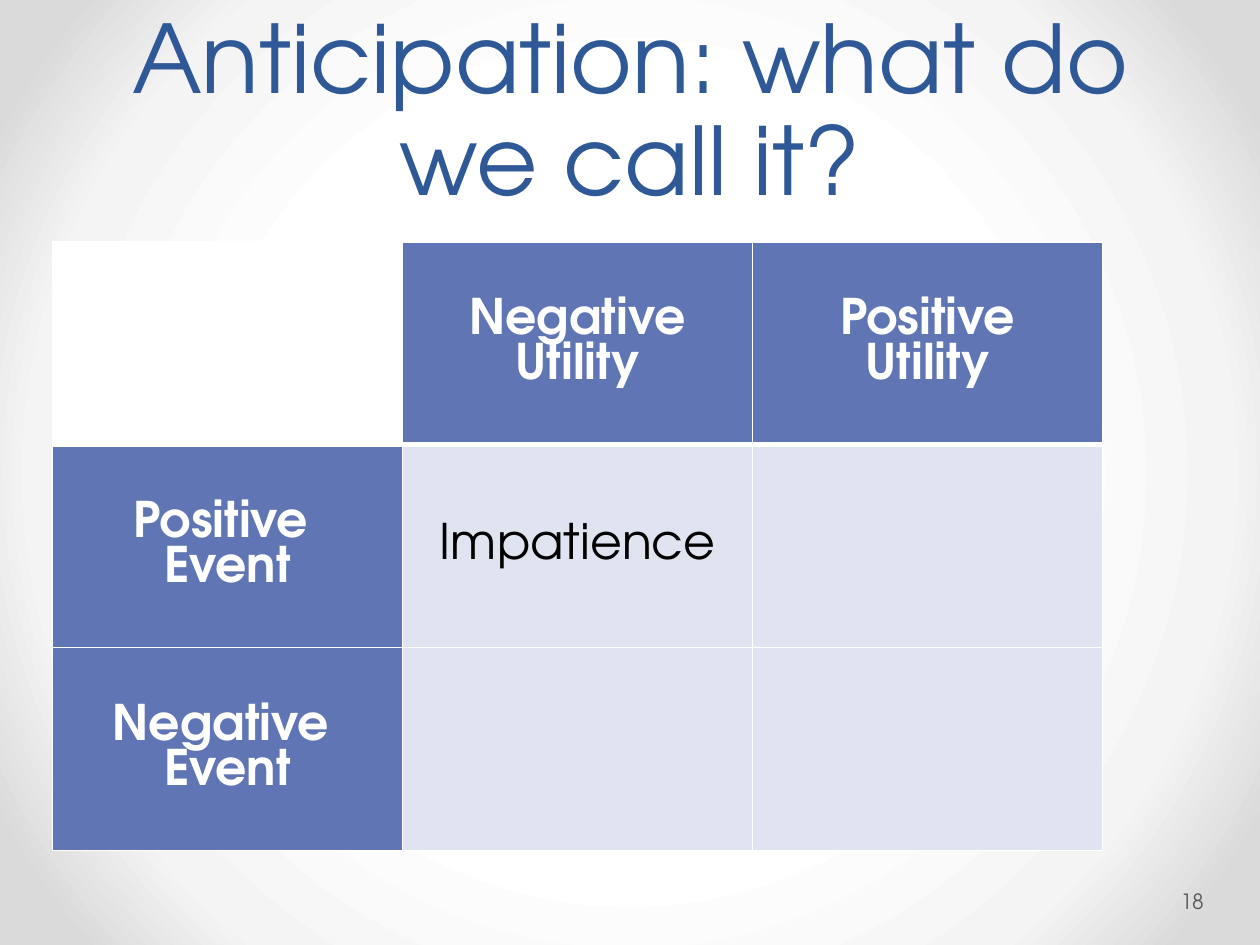
from dataclasses import dataclass

from lxml import etree
from pptx import Presentation
from pptx.dml.color import RGBColor
from pptx.enum.text import MSO_ANCHOR, PP_ALIGN
from pptx.oxml.ns import qn
from pptx.util import Inches, Pt

CENTER, LEFT = PP_ALIGN.CENTER, PP_ALIGN.LEFT
MIDDLE, BOTTOM = MSO_ANCHOR.MIDDLE, MSO_ANCHOR.BOTTOM


@dataclass(frozen=True)
class Theme:
    font: str = "TeX Gyre Adventor"
    title: str = "2F5897"
    number: str = "595959"
    header: str = "6076B4"
    body: str = "DFE4F0"
    white: str = "FFFFFF"
    black: str = "000000"
    title_size: int = 54
    title_spacing: int = 58
    cell_size: int = 28
    number_size: int = 12
    thin: int = 1
    thick: int = 3
    backdrop: tuple = ((50, "FFFFFF"), (76, "F4F4F4"), (92, "DADADA"))


THEME = Theme()


def write(frame, text, *, size, color, bold=False, align=LEFT, spacing=None):
    paragraph = frame.paragraphs[0]
    paragraph.text = text
    paragraph.alignment = align
    if spacing:
        paragraph.line_spacing = Pt(spacing)
    for run in paragraph.runs:
        run.font.name = THEME.font
        run.font.size = Pt(size)
        run.font.bold = bold
        run.font.color.rgb = RGBColor.from_string(color)


def add_solid(parent, color):
    fill = etree.SubElement(parent, qn("a:solidFill"))
    etree.SubElement(fill, qn("a:srgbClr"), val=color)


deck = Presentation()
deck.slide_width, deck.slide_height = Inches(10), Inches(7.5)
WIDTH, HEIGHT = deck.slide_width, deck.slide_height
slide = deck.slides.add_slide(deck.slide_layouts[6])

# Radial backdrop
slide.background.fill.gradient()
gradient = next(slide.background._cSld.iter(qn("a:gradFill")))
for child in list(gradient):
    gradient.remove(child)
stops = etree.SubElement(gradient, qn("a:gsLst"))
for position, color in THEME.backdrop:
    stop = etree.SubElement(stops, qn("a:gs"), pos=str(position * 1000))
    etree.SubElement(stop, qn("a:srgbClr"), val=color)
radial = etree.SubElement(gradient, qn("a:path"), path="circle")
etree.SubElement(radial, qn("a:fillToRect"), l="50000", t="50000", r="50000", b="50000")

# Title
title = slide.shapes.add_textbox(int(WIDTH * 0.05), 0, int(WIDTH * 0.9), Inches(1.75)).text_frame
title.word_wrap = True
title.vertical_anchor = BOTTOM
write(title, "Anticipation: what do we call it?", size=THEME.title_size,
      color=THEME.title, align=CENTER, spacing=THEME.title_spacing)

# Slide number
number = slide.shapes.add_textbox(
    int(WIDTH * 0.934), int(HEIGHT * 0.927), int(WIDTH * 0.061), int(HEIGHT * 0.053)).text_frame
number.word_wrap = True
number.vertical_anchor = MIDDLE
number.margin_left, number.margin_right = Inches(0.03), Inches(0.05)
write(number, "18", size=THEME.number_size, color=THEME.number)

# Event by utility matrix
MATRIX = [
    ["", "Negative\nUtility", "Positive\nUtility"],
    ["Positive \nEvent", "Impatience", ""],
    ["Negative \nEvent", "", ""],
]
COLUMN, ROW = int(WIDTH / 3.6), Inches(1.61)
matrix = slide.shapes.add_table(
    3, 3, WIDTH // 24, int(HEIGHT * 0.256), COLUMN * 3, ROW * 3).table
for column in matrix.columns:
    column.width = COLUMN
for row in matrix.rows:
    row.height = ROW

for r, labels in enumerate(MATRIX):
    for c, label in enumerate(labels):
        cell = matrix.cell(r, c)
        heading = r == 0 or c == 0
        if r == c == 0:
            fill = THEME.white
        else:
            fill = THEME.header if heading else THEME.body
        cell.fill.solid()
        cell.fill.fore_color.rgb = RGBColor.from_string(fill)
        cell.vertical_anchor = MIDDLE
        if label:
            write(cell.text_frame, label, size=THEME.cell_size, bold=heading, align=CENTER,
                  color=THEME.white if heading else THEME.black)
        properties = cell._tc.get_or_add_tcPr()
        for order, side in enumerate("LRTB"):
            under_header = (r, side) in ((0, "B"), (1, "T"))
            weight = THEME.thick if under_header else THEME.thin
            border = etree.Element(qn(f"a:ln{side}"), w=str(Pt(weight)))
            add_solid(border, THEME.white)
            properties.insert(order, border)

deck.save("out.pptx")
